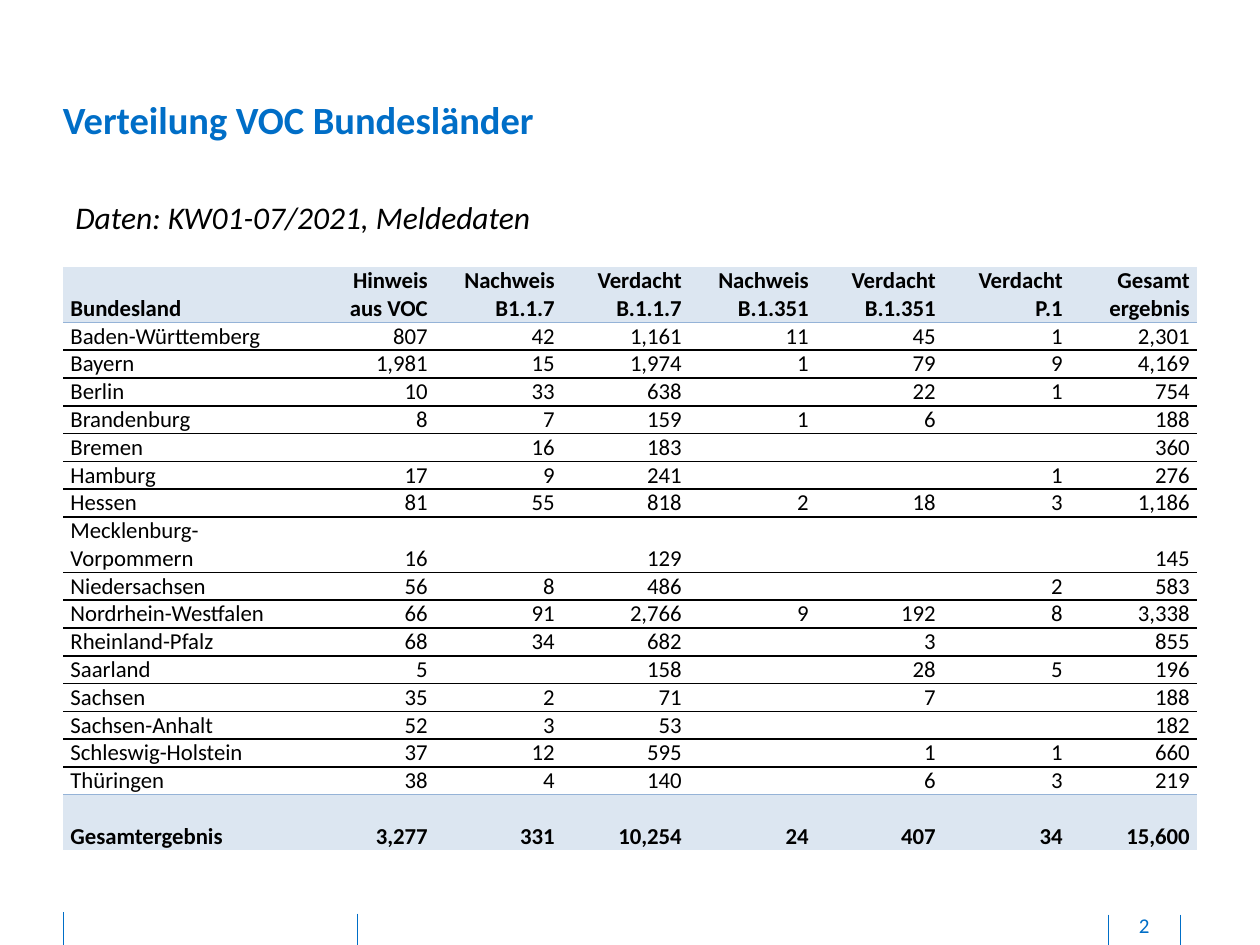
from lxml import etree
from pptx import Presentation
from pptx.dml.color import RGBColor
from pptx.enum.shapes import MSO_CONNECTOR
from pptx.enum.text import MSO_ANCHOR, PP_ALIGN
from pptx.oxml.ns import qn
from pptx.util import Cm, Pt

STRAIGHT = MSO_CONNECTOR.STRAIGHT
BOTTOM = MSO_ANCHOR.BOTTOM
LEFT, CENTER, RIGHT = PP_ALIGN.LEFT, PP_ALIGN.CENTER, PP_ALIGN.RIGHT
NO_TABLE_STYLE = "{2D5ABB26-0587-4C30-8999-92F81FD0307C}"

HEADINGS = [
    "Bundesland", "Hinweis aus VOC", "Nachweis B1.1.7", "Verdacht B.1.1.7",
    "Nachweis B.1.351", "Verdacht B.1.351", "Verdacht P.1", "Gesamt ergebnis",
]
STATES = [
    ["Baden-Württemberg", "807", "42", "1,161", "11", "45", "1", "2,301"],
    ["Bayern", "1,981", "15", "1,974", "1", "79", "9", "4,169"],
    ["Berlin", "10", "33", "638", "", "22", "1", "754"],
    ["Brandenburg", "8", "7", "159", "1", "6", "", "188"],
    ["Bremen", "", "16", "183", "", "", "", "360"],
    ["Hamburg", "17", "9", "241", "", "", "1", "276"],
    ["Hessen", "81", "55", "818", "2", "18", "3", "1,186"],
    ["Mecklenburg-Vorpommern", "16", "", "129", "", "", "", "145"],
    ["Niedersachsen", "56", "8", "486", "", "", "2", "583"],
    ["Nordrhein-Westfalen", "66", "91", "2,766", "9", "192", "8", "3,338"],
    ["Rheinland-Pfalz", "68", "34", "682", "", "3", "", "855"],
    ["Saarland", "5", "", "158", "", "28", "5", "196"],
    ["Sachsen", "35", "2", "71", "", "7", "", "188"],
    ["Sachsen-Anhalt", "52", "3", "53", "", "", "", "182"],
    ["Schleswig-Holstein", "37", "12", "595", "", "1", "1", "660"],
    ["Thüringen", "38", "4", "140", "", "6", "3", "219"],
]
TOTALS = ["Gesamtergebnis", "3,277", "331", "10,254", "24", "407", "34", "15,600"]


def color(hex_string):
    return RGBColor.from_string(hex_string)


def write(frame, text, size=13, ink="000000", bold=False, italic=False, align=LEFT):
    paragraph = frame.paragraphs[0]
    paragraph.alignment = align
    if not text:
        etree.SubElement(paragraph._p, qn("a:endParaRPr"), sz=str(size * 100))
        return
    run = paragraph.add_run()
    run.text = text
    font = run.font
    font.name, font.size = "Calibri", Pt(size)
    font.bold, font.italic = bold, italic
    font.color.rgb = color(ink)


class SlideBuilder:
    accent = "006EC7"
    band = "DCE6F1"
    band_rule = "95B3D7"
    row_rule = "000000"
    line_height = 0.56

    def __init__(self, slide):
        self.slide = slide

    def text(self, left, top, width, height, content, margins=(0, 0, 0, 0), wrap=True, **style):
        box = self.slide.shapes.add_textbox(Cm(left), Cm(top), Cm(width), Cm(height))
        frame = box.text_frame
        frame.word_wrap = wrap
        (frame.margin_left, frame.margin_top,
         frame.margin_right, frame.margin_bottom) = map(Cm, margins)
        write(frame, content, **style)

    def divider(self, x, top):
        rule = self.slide.shapes.add_connector(STRAIGHT, Cm(x), Cm(top), Cm(x), Cm(19.05))
        rule.line.color.rgb = color(self.accent)
        rule.line.width = Pt(0.5)
        etree.SubElement(rule._element.spPr, qn("a:effectLst"))

    def border(self, cell, side, ink):
        line = etree.SubElement(cell._tc.get_or_add_tcPr(), qn(f"a:{side}"), w=str(Pt(1)))
        fill = etree.SubElement(line, qn("a:solidFill"))
        etree.SubElement(fill, qn("a:srgbClr"), val=ink)

    def cell(self, cell, content, banded, align, above, below):
        cell.margin_left = cell.margin_right = Cm(0.15)
        cell.margin_top = cell.margin_bottom = 0
        cell.vertical_anchor = BOTTOM
        for side, ink in (("lnT", above), ("lnB", below)):
            if ink:
                self.border(cell, side, ink)
        if banded:
            cell.fill.solid()
            cell.fill.fore_color.rgb = color(self.band)
        else:
            cell.fill.background()
        write(cell.text_frame, content, bold=banded, align=align)

    def table(self, left, top, widths, rows, tall_rows):
        heights = [self.line_height * (2 if i in tall_rows else 1) for i in range(len(rows))]
        frame = self.slide.shapes.add_table(
            len(rows), len(widths), Cm(left), Cm(top), Cm(sum(widths)), Cm(sum(heights)))
        grid = frame.table
        grid.first_row = grid.horz_banding = False
        next(frame._element.iter(qn("a:tableStyleId"))).text = NO_TABLE_STYLE
        for column, width in zip(grid.columns, widths):
            column.width = Cm(width)
        last = len(rows) - 1
        inner_rules = [self.row_rule] * (last - 2)
        rules = [None, self.band_rule, *inner_rules, self.band_rule, None]
        for i, (values, height) in enumerate(zip(rows, heights)):
            grid.rows[i].height = Cm(height)
            for j, value in enumerate(values):
                self.cell(grid.cell(i, j), value, i in (0, last),
                          RIGHT if j else LEFT, rules[i], rules[i + 1])


def main():
    deck = Presentation()
    deck.slide_width, deck.slide_height = Cm(25.4), Cm(19.05)
    builder = SlideBuilder(deck.slides.add_slide(deck.slide_layouts[6]))

    for x, top in ((7.21, 18.42), (1.27, 18.39), (23.8, 18.44), (22.35, 18.44)):
        builder.divider(x, top)
    builder.text(1.27, 1.93, 22.48, 1.8, "Verteilung VOC Bundesländer",
                 size=22, ink=builder.accent, bold=True)
    builder.text(22.38, 18.39, 1.37, 0.53, "2", margins=(0, 0, 0, 0.13),
                 size=12, ink=builder.accent, align=CENTER)

    rows = [HEADINGS, *STATES, TOTALS]
    tall_rows = (0, 8, len(rows) - 1)
    builder.table(1.27, 5.38, [4.94] + [2.56] * 7, rows, tall_rows)
    builder.text(1.27, 3.86, 9.98, 1.02, "Daten: KW01-07/2021, Meldedaten",
                 margins=(0.25, 0.13, 0.25, 0.13), wrap=False, size=18, italic=True)
    deck.save("out.pptx")


if __name__ == "__main__":
    main()
